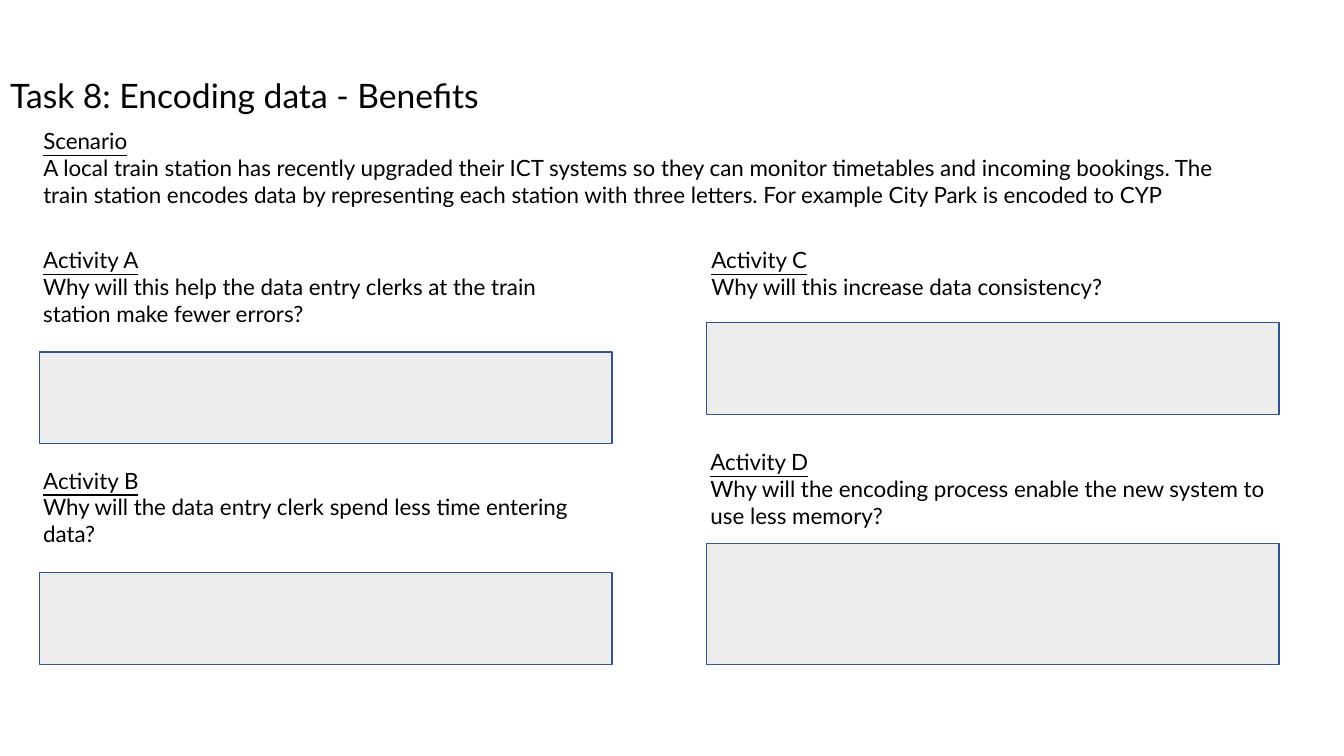
from pptx import Presentation
from pptx.dml.color import RGBColor
from pptx.enum import shapes, text
from pptx.util import Pt

FONT = "Lato"
BLACK, GREY, BLUE = "000000", "EDEDED", "31538F"
TEXT_WIDTH, ANSWER_WIDTH = 417.6, 409

SCENARIO = (
    "A local train station has recently upgraded their ICT systems so they can "
    "monitor timetables and incoming bookings. The train station encodes data by "
    "representing each station with three letters. For example City Park is "
    "encoded to CYP"
)

# Heading, question, text (left, top, height), answer (left, top, height)
ACTIVITIES = [
    ("Activity A", "Why will this help the data entry clerks at the train station make fewer errors?",
     (23.8, 172.1, 65.5), (28.1, 251.3, 65.5)),
    ("Activity B", "Why will the data entry clerk spend less time entering data?",
     (23.8, 329.8, 65.5), (28.1, 409, 65.5)),
    ("Activity C", "Why will this increase data consistency?",
     (501.1, 172.1, 46.1), (504.7, 230.4, 65.5)),
    ("Activity D", "Why will the encoding process enable the new system to use less memory?",
     (500.4, 316.8, 65.5), (504.7, 388.1, 86.4)),
]


def colour(value):
    return RGBColor.from_string(value)


def apply(target, values):
    for name, value in values.items():
        setattr(target, name, value)


def set_frame(box):
    apply(box.text_frame, {
        "word_wrap": True,
        "auto_size": text.MSO_AUTO_SIZE.NONE,
        "vertical_anchor": text.MSO_ANCHOR.TOP,
        "margin_left": Pt(7.2), "margin_right": Pt(7.2),
        "margin_top": Pt(3.6), "margin_bottom": Pt(3.6),
    })


def write(para, words, size, underline=False):
    para.alignment = text.PP_ALIGN.LEFT
    span = para.add_run()
    span.text = words
    apply(span.font, {"name": FONT, "size": Pt(size), "underline": underline})
    span.font.color.rgb = colour(BLACK)


def add_title(page, words):
    title = page.shapes.title
    apply(title, {"left": Pt(0), "top": Pt(49.7), "width": Pt(615.6), "height": Pt(36)})
    set_frame(title)
    write(title.text_frame.paragraphs[0], words, 24)


def add_section(page, heading, body, left, top, width, height):
    box = page.shapes.add_textbox(Pt(left), Pt(top), Pt(width), Pt(height))
    set_frame(box)
    write(box.text_frame.paragraphs[0], heading, 16, underline=True)
    write(box.text_frame.add_paragraph(), body, 16)


def add_answer(page, left, top, height):
    box = page.shapes.add_shape(shapes.MSO_SHAPE.RECTANGLE, Pt(left), Pt(top),
                                Pt(ANSWER_WIDTH), Pt(height))
    box.shadow.inherit = False
    box.fill.solid()
    box.fill.fore_color.rgb = colour(GREY)
    box.line.color.rgb = colour(BLUE)
    box.line.width = Pt(1)


def main():
    deck = Presentation()
    apply(deck, {"slide_width": Pt(960), "slide_height": Pt(540)})
    page = deck.slides.add_slide(deck.slide_layouts.get_by_name("Title Only"))

    # Title and scenario
    add_title(page, "Task 8: Encoding data - Benefits")
    add_section(page, "Scenario", SCENARIO, 23.8, 87.1, 862.6, 65.5)

    # Activities with their answer boxes
    for heading, question, (left, top, height), answer in ACTIVITIES:
        add_section(page, heading, question, left, top, TEXT_WIDTH, height)
        add_answer(page, *answer)

    deck.save("out.pptx")


if __name__ == "__main__":
    main()
